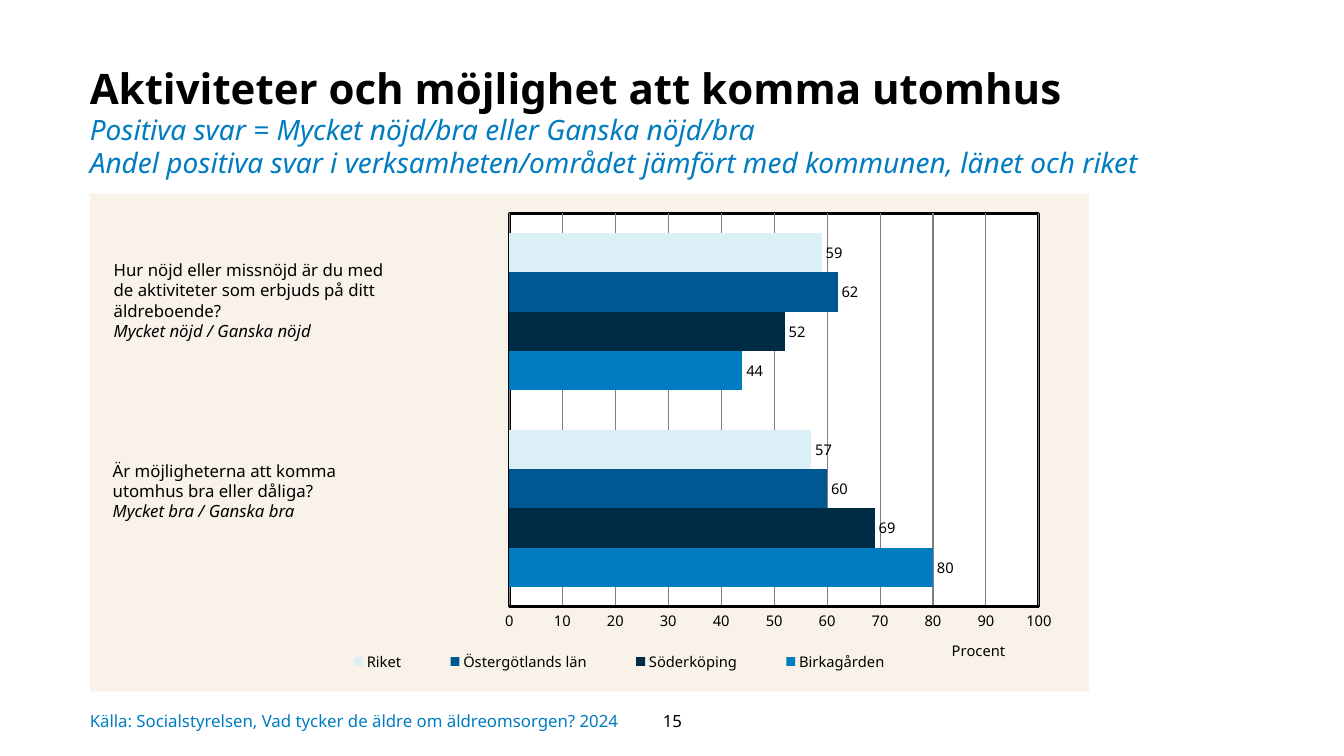
from dataclasses import dataclass

from lxml.etree import SubElement
from pptx import Presentation
from pptx.chart.data import CategoryChartData
from pptx.dml.color import RGBColor as RGB
from pptx.enum.chart import XL_CHART_TYPE as ChartType, XL_LABEL_POSITION as LabelPos
from pptx.enum.chart import XL_LEGEND_POSITION as LegendPos, XL_TICK_MARK as Tick
from pptx.enum.text import MSO_ANCHOR as Anchor, PP_ALIGN as Align
from pptx.oxml import parse_xml
from pptx.oxml.ns import nsdecls, qn
from pptx.util import Inches, Pt


@dataclass(frozen=True)
class Theme:
    font: str = "Noto Sans"
    black: str = "000000"
    blue: str = "017CC1"
    navy: str = "002B45"
    mid_blue: str = "005892"
    pale_blue: str = "DBF0F6"
    sand: str = "F8F2E8"
    white: str = "FFFFFF"
    grid: str = "808080"
    title: float = 30
    subtitle: float = 20
    body: float = 12
    chart: float = 10.5


@dataclass(frozen=True)
class Box:
    left: int
    top: int
    width: int
    height: int

    def share(self, x, y, w, h):
        return Box(int(self.left + self.width * x / 100), int(self.top + self.height * y / 100),
                   int(self.width * w / 100), int(self.height * h / 100))

    def frame(self):
        return self.left, self.top, self.width, self.height


THEME = Theme()
CATEGORIES = ("1", "2")
SERIES = (
    ("Birkagården", (80, 44), THEME.blue),
    ("Söderköping", (69, 52), THEME.navy),
    ("Östergötlands län", (60, 62), THEME.mid_blue),
    ("Riket", (57, 59), THEME.pale_blue),
)
QUESTIONS = (
    ((1.4, 12.35, 30.3, 22.1),
     "Hur nöjd eller missnöjd är du med de aktiviteter som erbjuds på ditt äldreboende?",
     "Mycket nöjd / Ganska nöjd"),
    ((1.3, 52.6, 30.4, 17.8),
     "Är möjligheterna att komma utomhus bra eller dåliga?",
     "Mycket bra / Ganska bra"),
)


def style(font, size, color=THEME.black, bold=False, italic=False):
    font.name, font.size, font.bold, font.italic = THEME.font, Pt(size), bold, italic
    font.color.rgb = RGB.from_string(color)


def add_text(slide, box, anchor=Anchor.TOP, insets=None):
    frame = slide.shapes.add_textbox(*box.frame()).text_frame
    frame.word_wrap = True
    frame.vertical_anchor = anchor
    if insets:
        frame.margin_left, frame.margin_top, frame.margin_right, frame.margin_bottom = map(Inches, insets)
    return frame


def add_heading(slide, box):
    heading = add_text(slide, box, insets=(0, 0, 0.1, 0.05)).paragraphs[0]
    heading.line_spacing = 0.97
    title = heading.add_run()
    title.text = "Aktiviteter och möjlighet att komma utomhus"
    style(title.font, THEME.title, bold=True)
    for line in ("Positiva svar = Mycket nöjd/bra eller Ganska nöjd/bra",
                 "Andel positiva svar i verksamheten/området jämfört med kommunen, länet och riket"):
        heading.add_line_break()
        subtitle = heading.add_run()
        subtitle.text = line
        style(subtitle.font, THEME.subtitle, THEME.blue, italic=True)


def add_question(slide, box, question, answers):
    frame = add_text(slide, box)
    frame.text = question
    style(frame.paragraphs[0].font, THEME.body)
    positive = frame.add_paragraph()
    positive.text = answers
    style(positive.font, THEME.body, italic=True)


def set_layout(parent, index, x, y, w=None, h=None, inner=False):
    for old in parent.findall(qn("c:layout")):
        parent.remove(old)
    layout = parse_xml(f"<c:layout {nsdecls('c')}/>")
    manual = SubElement(layout, qn("c:manualLayout"))
    values = [("layoutTarget", "inner")] if inner else []
    values += [("xMode", "edge"), ("yMode", "edge"), ("x", x), ("y", y)]
    values += [("w", w), ("h", h)] if w else []
    for tag, value in values:
        SubElement(manual, qn(f"c:{tag}")).set("val", str(value))
    parent.insert(index, layout)


def area_format(fill, line=""):
    outline = f'<a:solidFill><a:srgbClr val="{line}"/></a:solidFill>' if line else "<a:noFill/>"
    return parse_xml(f'<c:spPr {nsdecls("c", "a")}><a:solidFill><a:srgbClr val="{fill}"/></a:solidFill>'
                     f'<a:ln w="{Pt(2)}">{outline}</a:ln></c:spPr>')


def add_percent_axis(axis):
    axis.minimum_scale, axis.maximum_scale, axis.major_unit = 0, 100, 10
    axis.major_tick_mark = axis.minor_tick_mark = Tick.NONE
    axis.format.line.color.rgb = RGB.from_string(THEME.black)
    axis.format.line.width = Pt(2)
    axis.major_gridlines.format.line.color.rgb = RGB.from_string(THEME.grid)
    axis.major_gridlines.format.line.width = Pt(0.75)
    style(axis.tick_labels.font, THEME.chart)
    unit = axis.axis_title.text_frame
    unit.text = "Procent"
    style(unit.paragraphs[0].font, THEME.chart)
    set_layout(axis.axis_title._element, 1, 0.86, 0.89)


def add_comparison(slide, box):
    data = CategoryChartData()
    data.categories = CATEGORIES
    for name, values, _ in SERIES:
        data.add_series(name, values)
    chart = slide.shapes.add_chart(ChartType.BAR_CLUSTERED, *box.frame(), data).chart
    chart.has_title = False
    style(chart.font, THEME.chart)
    chart.category_axis.visible = False
    add_percent_axis(chart.value_axis)

    bars = chart.plots[0]
    bars.gap_width, bars.vary_by_categories = 100, False
    for series, (_, _, color) in zip(bars.series, SERIES):
        series.format.fill.solid()
        series.format.fill.fore_color.rgb = RGB.from_string(color)
        labels = series.data_labels
        labels.show_value = True
        labels.position = LabelPos.OUTSIDE_END
        style(labels.font, THEME.chart)

    chart.has_legend = True
    chart.legend.position = LegendPos.BOTTOM
    chart.legend.include_in_layout = False
    style(chart.legend.font, THEME.chart)
    set_layout(chart.legend._element, 1, 0.22, 0.91, 0.62, 0.06)

    chart_root = chart._chartSpace.chart
    plot_area = chart_root.plotArea
    set_layout(plot_area, 0, 0.42, 0.04, 0.53, 0.79, inner=True)
    plot_area.append(area_format(THEME.white, THEME.black))
    chart_root.addnext(area_format(THEME.sand))

    for place, question, answers in QUESTIONS:
        add_question(slide, box.share(*place), question, answers)


def add_footer(slide, box):
    source = add_text(slide, box, Anchor.MIDDLE, (0, 0, 0, 0))
    source.text = "Källa: Socialstyrelsen, Vad tycker de äldre om äldreomsorgen? 2024"
    style(source.paragraphs[0].font, THEME.body, THEME.blue)
    number = add_text(slide, box.share(58.75, 0, 11.37, 100), Anchor.MIDDLE)
    number.text = "15"
    number.paragraphs[0].alignment = Align.CENTER
    style(number.paragraphs[0].font, THEME.body)


def main():
    deck = Presentation()
    deck.slide_width, deck.slide_height = Inches(13.33), Inches(7.5)
    slide = deck.slides.add_slide(deck.slide_layouts[6])
    page = Box(0, 0, deck.slide_width, deck.slide_height)
    add_heading(slide, page.share(6.68, 8.67, 79.52, 16.93))
    add_comparison(slide, page.share(6.68, 25.6, 74.34, 65.87))
    add_footer(slide, page.share(6.68, 92.67, 67.29, 5.33))
    deck.save("out.pptx")


if __name__ == "__main__":
    main()
